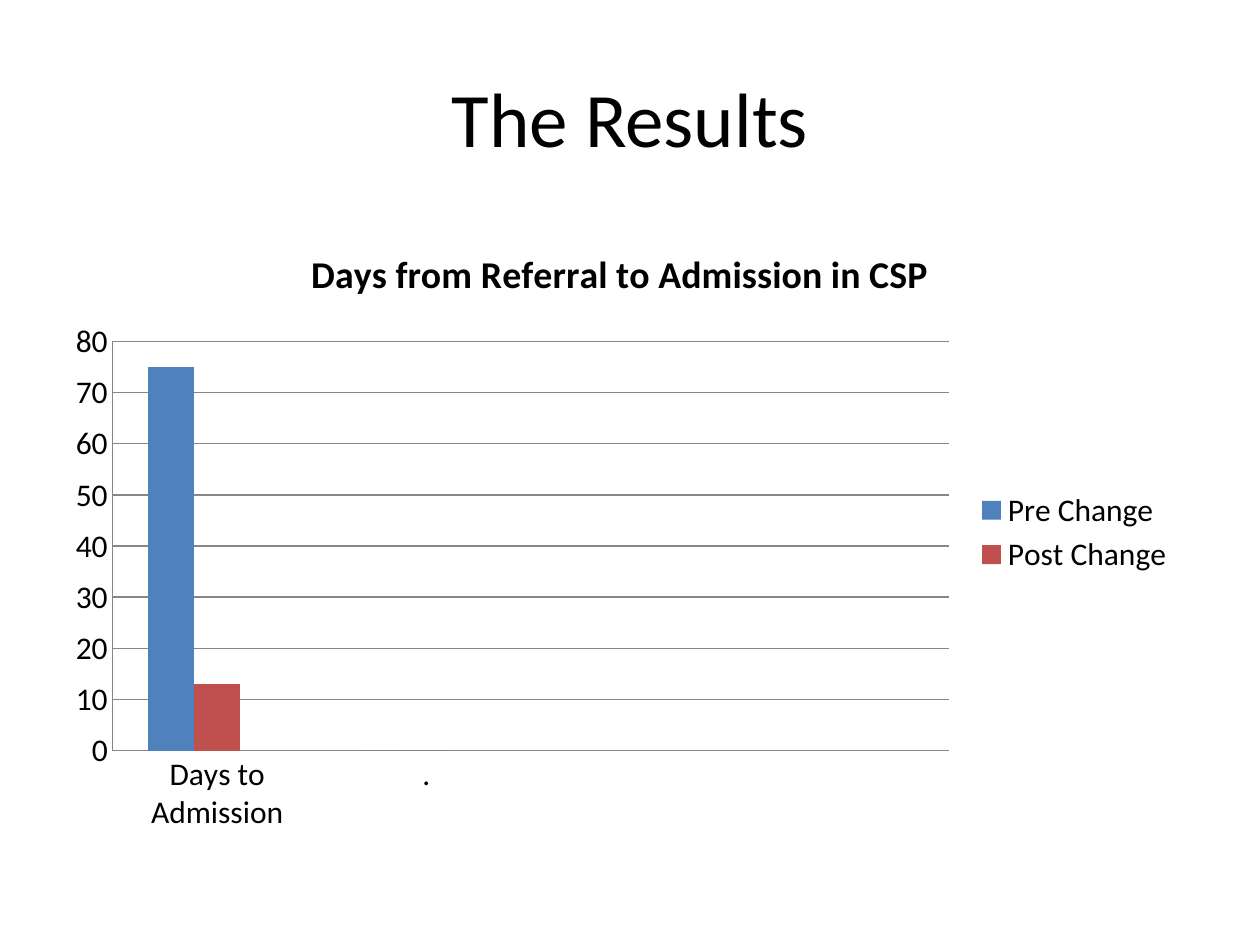
from lxml import etree
from pptx import Presentation
from pptx.chart.data import CategoryChartData
from pptx.dml.color import RGBColor
from pptx.enum.chart import XL_CHART_TYPE, XL_LEGEND_POSITION, XL_TICK_MARK
from pptx.enum.text import MSO_ANCHOR, PP_ALIGN
from pptx.oxml import parse_xml
from pptx.oxml.ns import nsdecls
from pptx.util import Cm, Pt

CLUSTERED = XL_CHART_TYPE.COLUMN_CLUSTERED
RIGHT = XL_LEGEND_POSITION.RIGHT
NO_TICK = XL_TICK_MARK.NONE
MIDDLE = MSO_ANCHOR.MIDDLE
CENTER = PP_ALIGN.CENTER

BLACK = RGBColor(0x00, 0x00, 0x00)
GREY = RGBColor(0x86, 0x86, 0x86)
BLUE = RGBColor(0x4F, 0x81, 0xBD)
RED = RGBColor(0xC0, 0x50, 0x4D)
GREEN = RGBColor(0x9B, 0xBB, 0x59)

SLIDE_SIZE = (Cm(25.4), Cm(19.05))
HEADING_BOX = (Cm(1.27), Cm(0.76), Cm(22.86), Cm(3.18))
CHART_BOX = (Cm(1.07), Cm(4.45), Cm(22.86), Cm(12.57))

CATEGORIES = ["Days to Admission", ".", "", ""]
SERIES = [
    ("Pre Change", [75, 0, None, None], BLUE),
    ("Post Change", [13, 0, None, None], RED),
    ("Series 3", [None] * 4, GREEN),
]
HIDDEN_ENTRY = 2


def set_font(font, size, bold=False):
    formats = {"name": "Calibri", "size": Pt(size), "bold": bold}
    for key, value in formats.items():
        setattr(font, key, value)
    font.color.rgb = BLACK


def set_line(line):
    line.color.rgb = GREY
    line.width = Pt(0.75)


def place_heading(slide, box):
    heading = slide.shapes.title
    for key, value in zip(("left", "top", "width", "height"), box):
        setattr(heading, key, value)
    frame = heading.text_frame
    frame.text = "The Results"
    frame.vertical_anchor = MIDDLE
    paragraph = frame.paragraphs[0]
    paragraph.alignment = CENTER
    set_font(paragraph.runs[0].font, 44)


def format_axes(chart):
    for axis in (chart.category_axis, chart.value_axis):
        axis.major_tick_mark = NO_TICK
        axis.minor_tick_mark = NO_TICK
        set_line(axis.format.line)
    days_axis = chart.value_axis
    scale = {"minimum_scale": 0, "maximum_scale": 80, "major_unit": 10,
             "has_major_gridlines": True}
    for key, value in scale.items():
        setattr(days_axis, key, value)
    set_line(days_axis.major_gridlines.format.line)


def format_legend(chart):
    chart.has_legend = True
    legend = chart.legend
    legend.position = RIGHT
    legend.include_in_layout = False
    entry = parse_xml(f"<c:legendEntry {nsdecls('c')}/>")
    for tag, value in (("idx", HIDDEN_ENTRY), ("delete", 1)):
        namespace = etree.QName(entry).namespace
        etree.SubElement(entry, f"{{{namespace}}}{tag}").set("val", str(value))
    legend._element.insert(1, entry)


def place_admission_chart(slide, box):
    data = CategoryChartData()
    data.categories = CATEGORIES
    for name, days, _ in SERIES:
        data.add_series(name, days)
    chart = slide.shapes.add_chart(CLUSTERED, *box, data).chart
    set_font(chart.font, 18)

    chart.has_title = True
    caption = chart.chart_title.text_frame
    caption.text = "Days from Referral to Admission in CSP"
    set_font(caption.paragraphs[0].runs[0].font, 21.6, bold=True)

    plot = chart.plots[0]
    plot.gap_width = 150
    plot.overlap = 0
    plot.vary_by_categories = False
    for series, (_, _, color) in zip(plot.series, SERIES):
        series.format.fill.solid()
        series.format.fill.fore_color.rgb = color
    format_axes(chart)
    format_legend(chart)


def main():
    presentation = Presentation()
    presentation.slide_width, presentation.slide_height = SLIDE_SIZE
    slide = presentation.slides.add_slide(presentation.slide_layouts[5])
    place_heading(slide, HEADING_BOX)
    place_admission_chart(slide, CHART_BOX)
    presentation.save("out.pptx")


if __name__ == "__main__":
    main()
